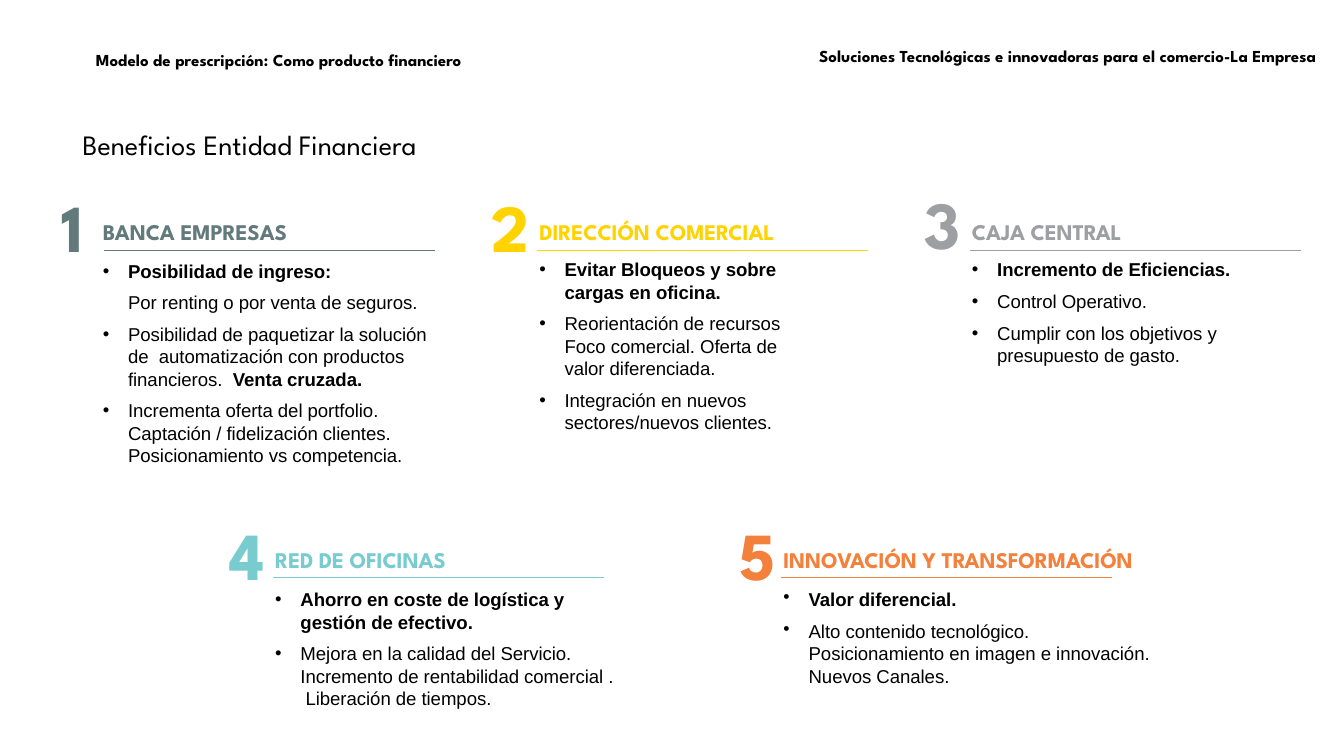
from dataclasses import dataclass

from lxml import etree
from pptx import Presentation
from pptx.dml.color import RGBColor
from pptx.enum.shapes import MSO_CONNECTOR
from pptx.enum.text import MSO_ANCHOR, MSO_AUTO_SIZE, PP_ALIGN
from pptx.oxml.ns import qn
from pptx.util import Inches, Pt

STRAIGHT = MSO_CONNECTOR.STRAIGHT
TOP, MIDDLE = MSO_ANCHOR.TOP, MSO_ANCHOR.MIDDLE
LEFT, RIGHT = PP_ALIGN.LEFT, PP_ALIGN.RIGHT
NO_FIT = MSO_AUTO_SIZE.NONE

BLACK = RGBColor(0x00, 0x00, 0x00)
WHITE = RGBColor(0xFF, 0xFF, 0xFF)
SLATE = RGBColor(0x63, 0x7A, 0x7C)
YELLOW = RGBColor(0xFF, 0xD3, 0x00)
GREY = RGBColor(0x9D, 0x9F, 0xA2)
TEAL = RGBColor(0x78, 0xCB, 0xCF)
ORANGE = RGBColor(0xF3, 0x81, 0x3C)

COMPARISON_LAYOUT = 4
RULE_LENGTH = 3.28


@dataclass
class Item:
    """A list entry; parts between asterisks are bold, \\v breaks the line."""
    text: str
    bullet: bool = True


@dataclass
class Section:
    heading: str
    color: RGBColor
    box: tuple
    number_at: tuple
    rule_at: tuple
    items: list
    first_gap: float = 10.7


class BenefitsSlide:
    heading_font = "League Spartan"
    body_font = "Arial"

    def __init__(self, presentation):
        self.slide = presentation.slides.add_slide(
            presentation.slide_layouts[COMPARISON_LAYOUT])
        self.slide.background.fill.solid()
        self.slide.background.fill.fore_color.rgb = WHITE
        self.bodies = [shape for shape in self.slide.placeholders
                       if shape.placeholder_format.idx]

    def place(self, shape, box, margins=(0, 0), anchor=TOP, wrap=True):
        shape.left, shape.top, shape.width, shape.height = map(Inches, box)
        frame = shape.text_frame
        frame.word_wrap = wrap
        frame.auto_size = NO_FIT
        frame.vertical_anchor = anchor
        frame.margin_left = frame.margin_right = Inches(margins[0])
        frame.margin_top = frame.margin_bottom = Inches(margins[1])
        return frame

    def new_box(self):
        return self.slide.shapes.add_textbox(0, 0, Inches(1), Inches(1))

    def add_run(self, paragraph, text, font, size, color, bold, spacing=0):
        run = paragraph.add_run()
        run.text = text
        run.font.name = font
        run.font.size = Pt(size)
        run.font.bold = bold
        run.font.color.rgb = color
        run.font._element.set("spc", str(spacing))

    def format_paragraph(self, paragraph, before=0, after=0, margin=0.02,
                         indent=0, bullet=False):
        paragraph.alignment = LEFT
        paragraph.space_before, paragraph.space_after = Pt(before), Pt(after)
        properties = paragraph._p.get_or_add_pPr()
        properties.set("marL", str(Inches(margin)))
        properties.set("indent", str(Inches(indent)))
        mark = etree.SubElement(properties,
                                qn("a:buChar" if bullet else "a:buNone"))
        if bullet:
            mark.set("char", "•")

    def title(self, text, box):
        frame = self.place(self.slide.shapes.title, box, (0.1, 0.05))
        paragraph = frame.paragraphs[0]
        paragraph.alignment = LEFT
        self.add_run(paragraph, text, self.heading_font, 20, BLACK, False)

    def header(self, text, box, margins, alignment=LEFT, line_spacing=1.0):
        frame = self.place(self.new_box(), box, margins, MIDDLE)
        paragraph = frame.paragraphs[0]
        paragraph.alignment = alignment
        paragraph.line_spacing = line_spacing
        self.add_run(paragraph, text, self.heading_font, 12, BLACK, True)

    def number(self, value, position, color):
        frame = self.place(self.new_box(), (*position, 0.44, 0.81), wrap=False)
        paragraph = frame.paragraphs[0]
        self.format_paragraph(paragraph)
        self.add_run(paragraph, str(value), self.heading_font, 48, color, True)

    def rule(self, left, top, color):
        line = self.slide.shapes.add_connector(
            STRAIGHT, Inches(left), Inches(top),
            Inches(left + RULE_LENGTH), Inches(top))
        line.line.color.rgb = color
        line.line.width = Pt(0.75)
        etree.SubElement(line._element.spPr, qn("a:effectLst"))

    def benefit_list(self, section):
        # The layout has four body placeholders; a further list gets a text box
        shape = self.bodies.pop(0) if self.bodies else self.new_box()
        frame = self.place(shape, section.box)
        heading = frame.paragraphs[0]
        self.format_paragraph(heading)
        self.add_run(heading, section.heading, self.heading_font, 16,
                     section.color, True, -10)
        for index, item in enumerate(section.items):
            paragraph = frame.add_paragraph()
            self.format_paragraph(
                paragraph, before=0 if index else section.first_gap, after=6.7,
                margin=0.27, indent=-0.25 if item.bullet else 0,
                bullet=item.bullet)
            for part, text in enumerate(item.text.split("*")):
                for row, words in enumerate(text.split("\v")):
                    if row:
                        paragraph.add_line_break()
                    if words:
                        self.add_run(paragraph, words, self.body_font, 13.3,
                                     BLACK, part % 2 == 1, -6)

    def section(self, value, section):
        self.benefit_list(section)
        self.number(value, section.number_at, section.color)
        self.rule(*section.rule_at, section.color)


SECTIONS = [
    Section("BANCA EMPRESAS", SLATE, (1, 2.16, 3.42, 2.84), (0.59, 1.84), (1.03, 2.49), [
        Item("*Posibilidad de ingreso:*"),
        Item("Por renting o por venta de seguros.", bullet=False),
        Item("Posibilidad de paquetizar la solución de  automatización con "
             "productos financieros.  *Venta cruzada.*"),
        Item("Incrementa oferta del portfolio. Captación / fidelización "
             "clientes. Posicionamiento vs competencia."),
    ]),
    Section("DIRECCIÓN COMERCIAL", YELLOW, (5.33, 2.16, 2.75, 2.54), (4.86, 1.84), (5.33, 2.49), [
        Item("*Evitar Bloqueos y sobre cargas en oficina.*"),
        Item("Reorientación de recursos Foco comercial. Oferta de valor "
             "diferenciada."),
        Item("Integración en nuevos sectores/nuevos clientes."),
    ], first_gap=9.7),
    Section("CAJA CENTRAL", GREY, (9.62, 2.16, 3.1, 1.5), (9.15, 1.81), (9.62, 2.49), [
        Item("*Incremento de Eficiencias.*"),
        Item("Control Operativo."),
        Item("Cumplir con los objetivos y presupuesto de gasto."),
    ], first_gap=9.7),
    Section("RED DE OFICINAS", TEAL, (2.71, 5.42, 3.42, 1.64), (2.26, 5.09), (2.71, 5.73), [
        Item("*Ahorro en coste de logística y gestión de efectivo.*"),
        Item("Mejora en la calidad del Servicio.\vIncremento de rentabilidad "
             "comercial .\v Liberación de tiempos."),
    ]),
    Section("INNOVACIÓN Y TRANSFORMACIÓN", ORANGE, (7.75, 5.42, 3.79, 1.42), (7.31, 5.09), (7.75, 5.73), [
        Item("*Valor diferencial.*"),
        Item("Alto contenido tecnológico.\vPosicionamiento en imagen e "
             "innovación.\vNuevos Canales."),
    ]),
]


def main():
    presentation = Presentation()
    presentation.slide_width = Inches(13.33)
    presentation.slide_height = Inches(7.5)
    benefits = BenefitsSlide(presentation)

    # Title and running headers
    benefits.title("Beneficios Entidad Financiera", (0.72, 1.21, 4.91, 0.44))
    benefits.header("Modelo de prescripción: Como producto financiero",
                    (0.86, 0.28, 6.31, 0.53), (0.09, 0.04), line_spacing=1.5)
    benefits.header("Soluciones Tecnológicas e innovadoras para el comercio-La Empresa",
                    (3.61, 0.44, 9.56, 0.23), (0.11, 0.06), RIGHT)

    # Numbered benefit sections
    for value, section in enumerate(SECTIONS, start=1):
        benefits.section(value, section)

    presentation.save("out.pptx")


if __name__ == "__main__":
    main()
